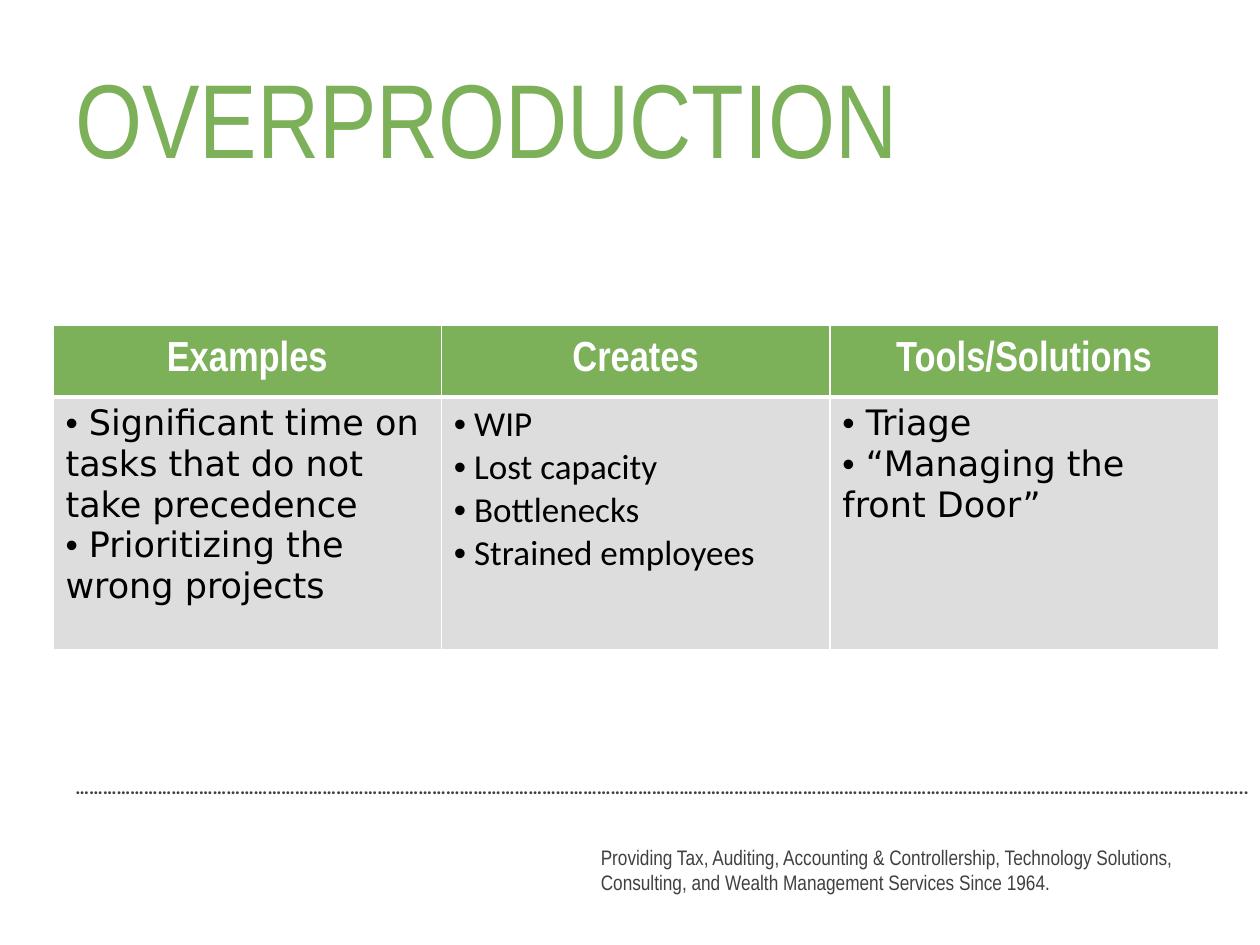
from lxml import etree
from pptx import Presentation
from pptx.dml.color import RGBColor
from pptx.enum.text import MSO_ANCHOR, PP_ALIGN
from pptx.oxml.ns import qn
from pptx.util import Inches, Pt

LEFT, CENTER = PP_ALIGN.LEFT, PP_ALIGN.CENTER
TOP, MIDDLE = MSO_ANCHOR.TOP, MSO_ANCHOR.MIDDLE
GREEN = RGBColor(0x7C, 0xB0, 0x59)
PALE = RGBColor(0xDD, 0xDD, 0xDD)
DARK = RGBColor(0x40, 0x40, 0x40)
WHITE = RGBColor(0xFF, 0xFF, 0xFF)
BLACK = RGBColor(0x00, 0x00, 0x00)
COLUMNS, ROWS = 100, 75

TITLE = {"name": "Arial Narrow", "size": Pt(60), "bold": False}
HEADER = {"name": "Arial Narrow", "size": Pt(24), "bold": True}
FOOTER = {"name": "Arial Narrow", "size": Pt(12), "bold": False}
DOTS = {"name": "Calibri", "size": Pt(11), "bold": True}
WIDE_BODY = {"name": "DejaVu Sans", "size": Pt(20), "bold": False}
BODY = {**WIDE_BODY, "name": "Calibri"}

TOPICS = [
    ("Examples", WIDE_BODY, [" Significant time on tasks that do not take precedence",
                             " Prioritizing the wrong projects"]),
    ("Creates", BODY, [" WIP", " Lost capacity", " Bottlenecks", " Strained employees"]),
    ("Tools/Solutions", WIDE_BODY, [" Triage", " “Managing the front Door”"]),
]


class SlideBuilder:
    """Holds the grid, the text style and the current slide."""

    def __init__(self):
        """Start a deck with one title-only slide."""
        self.deck = Presentation()
        self.deck.slide_width, self.deck.slide_height = Inches(10), Inches(7.5)
        self.page = self.deck.slides.add_slide(self.deck.slide_layouts[5])

    def area(self, left, top, width, height):
        """Turn grid columns and rows into lengths."""
        column = self.deck.slide_width / COLUMNS
        row = self.deck.slide_height / ROWS
        return [round(value * unit) for value, unit in
                zip((left, top, width, height), (column, row, column, row))]

    def fill_text(self, frame, lines, style, color, align=LEFT, bullet=False):
        """Fill a text frame with styled paragraphs."""
        frame.word_wrap = True
        for index, line in enumerate(lines):
            para = frame.add_paragraph() if index else frame.paragraphs[0]
            para.alignment = align
            if bullet:
                properties = para._p.get_or_add_pPr()
                properties.set("marL", "0")
                properties.set("indent", "0")
                etree.SubElement(properties, qn("a:buFont"), typeface="Arial")
                etree.SubElement(properties, qn("a:buChar"), char="•")
            span = para.add_run()
            span.text = line
            for name, value in style.items():
                setattr(span.font, name, value)
            span.font.color.rgb = color

    def title(self, text, *place):
        """Move and format the title placeholder."""
        box = self.page.shapes.title
        box.left, box.top, box.width, box.height = self.area(*place)
        box.text_frame.vertical_anchor = MIDDLE
        self.fill_text(box.text_frame, [text], TITLE, GREEN)

    def text(self, text, style, anchor, *place, wrap=True):
        """Add a text box."""
        frame = self.page.shapes.add_textbox(*self.area(*place)).text_frame
        frame.vertical_anchor = anchor
        self.fill_text(frame, [text], style, DARK)
        frame.word_wrap = wrap

    def cell(self, cell, fill, anchor, borders):
        """Set the fill, anchor and white borders of a table cell."""
        cell.vertical_anchor = anchor
        properties = cell._tc.get_or_add_tcPr()
        for side, width in zip("LRTB", borders):
            line = etree.SubElement(properties, qn(f"a:ln{side}"), w=str(Pt(width)))
            solid = etree.SubElement(line, qn("a:solidFill"))
            etree.SubElement(solid, qn("a:srgbClr"), val=str(WHITE))
        cell.fill.solid()
        cell.fill.fore_color.rgb = fill

    def table(self, topics, heights, *place):
        """Add a table with a header and a bulleted cell for each topic."""
        table = self.page.shapes.add_table(2, len(topics), *self.area(*place)).table
        for row, height in zip(table.rows, heights):
            row.height = self.area(0, 0, 0, height)[3]
        for index, (heading, style, items) in enumerate(topics):
            header, body = table.cell(0, index), table.cell(1, index)
            self.cell(header, GREEN, MIDDLE, (1, 1, 1, 3))
            self.fill_text(header.text_frame, [heading], HEADER, WHITE, CENTER)
            self.cell(body, PALE, TOP, (1, 1, 3, 1))
            self.fill_text(body.text_frame, items, style, BLACK, bullet=True)


def main():
    """Build and save the slide."""
    slide = SlideBuilder()
    slide.text("…" * 83 + "..…..", DOTS, TOP, 5, 61, 96.7, 2.9, wrap=False)
    slide.text("Providing Tax, Auditing, Accounting & Controllership, Technology Solutions, "
               "Consulting, and Wealth Management Services Since 1964.",
               FOOTER, MIDDLE, 46.7, 65.3, 51.7, 7.4)
    slide.table(TOPICS, (5.7, 20.1), 4.2, 25.8, 92.5, 25.8)
    slide.title("OVERPRODUCTION", 5, 3, 90, 12.5)
    slide.deck.save("out.pptx")


if __name__ == "__main__":
    main()
